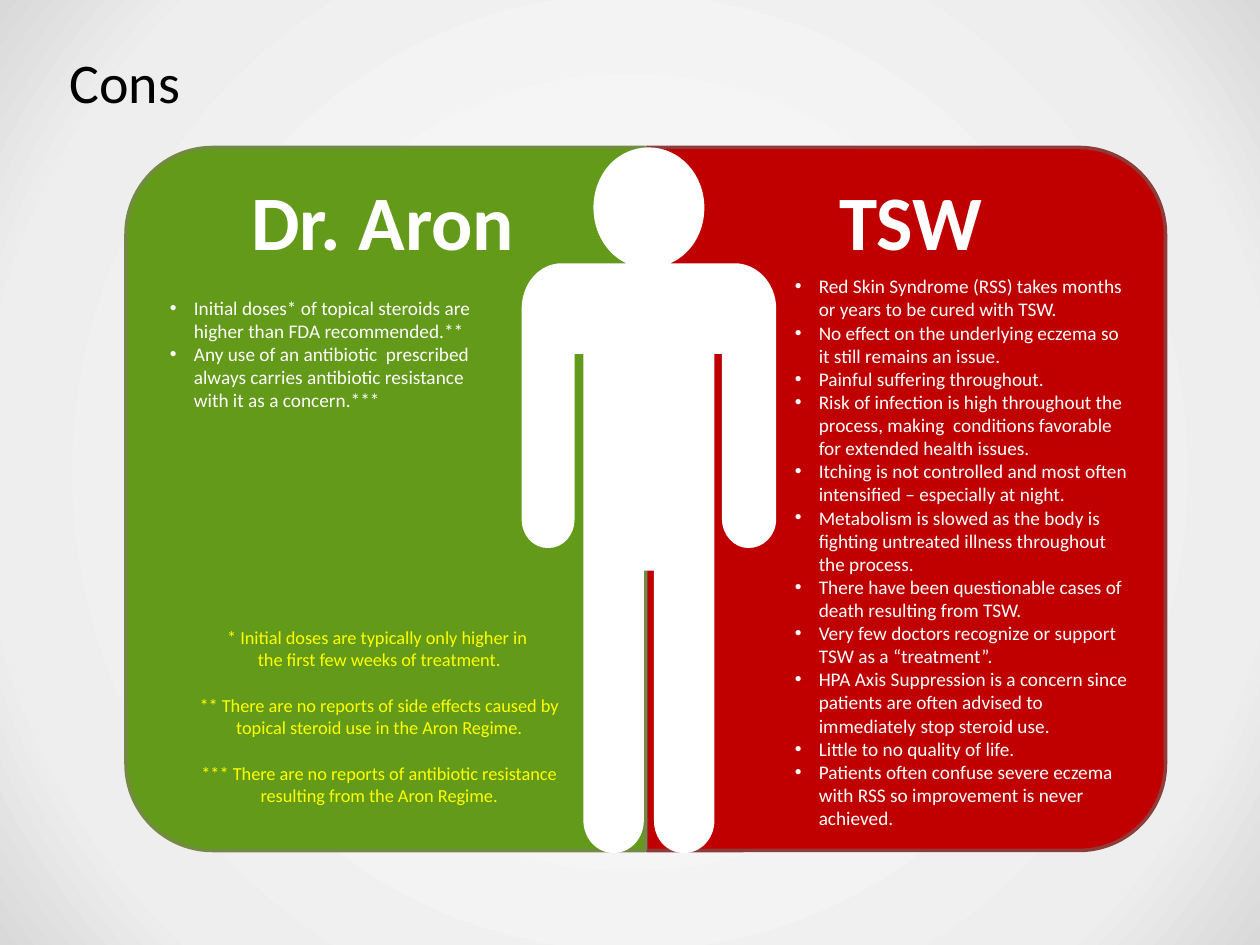
from lxml import etree
from pptx import Presentation
from pptx.dml.color import RGBColor
from pptx.enum import shapes, text
from pptx.oxml import ns, parse_xml
from pptx.util import Inches, Pt

THEME = {
    "font": "Calibri",
    "black": "000000", "white": "FFFFFF", "note": "FFFF00",
    "title_size": 32, "heading_size": 44, "body_size": 11, "note_size": 10.5,
    "background": [(0, "FFFFFF"), (81, "EEEEEE"), (100, "D9D9D9")],
}

TITLE = "Cons"
SIDES = [
    {
        "heading": "Dr. Aron", "heading_box": (1.75, 1.33, 2.58, 0.84),
        "panel_left": 0.27, "rotation": 270, "fill": "639A1A", "line": "738A42",
        "points_box": (1.25, 2.25, 2.81, 4.08),
        "points": [
            "Initial doses* of topical steroids are higher than FDA recommended.**",
            "Any use of an antibiotic  prescribed always carries antibiotic "
            "resistance with it as a concern.***",
        ],
    },
    {
        "heading": "TSW", "heading_box": (6.48, 1.33, 1.5, 0.84),
        "panel_left": 4.4, "rotation": 90, "fill": "C00000", "line": "8E3B39",
        "points_box": (6.21, 2.08, 2.87, 4.83),
        "points": [
            "Red Skin Syndrome (RSS) takes months or years to be cured with TSW.",
            "No effect on the underlying eczema so it still remains an issue.",
            "Painful suffering throughout.",
            "Risk of infection is high throughout the process, making  conditions "
            "favorable for extended health issues.",
            "Itching is not controlled and most often intensified – especially at night.",
            "Metabolism is slowed as the body is fighting untreated illness "
            "throughout the process.",
            "There have been questionable cases of death resulting from TSW.",
            "Very few doctors recognize or support TSW as a “treatment”.",
            "HPA Axis Suppression is a concern since patients are often advised to "
            "immediately stop steroid use.",
            "Little to no quality of life.",
            "Patients often confuse severe eczema with RSS so improvement is never achieved.",
        ],
    },
]
FOOTNOTES = [
    ["* Initial doses are typically only higher in ", "the first few weeks of treatment."],
    ["** There are no reports of side effects caused by topical steroid use in the Aron Regime."],
    ["*** There are no reports of antibiotic resistance resulting from the Aron Regime."],
]
# Outline in inches: a pair is a straight step, six numbers are a cubic curve.
PERSON_START = (5.15, 1.17)
PERSON = [
    (5.39, 1.17, 5.59, 1.38, 5.59, 1.65), (5.59, 1.85, 5.48, 2.02, 5.32, 2.09),
    (5.83, 2.09), (6.01, 2.09, 6.16, 2.25, 6.16, 2.45), (6.16, 2.64),
    (6.16, 3.13, 6.16, 3.63, 6.16, 4.12), (6.16, 4.25, 6.06, 4.35, 5.94, 4.35),
    (5.83, 4.35, 5.73, 4.25, 5.73, 4.12), (5.73, 2.81), (5.67, 2.81),
    (5.67, 4.04, 5.67, 5.28, 5.67, 6.51), (5.67, 6.66, 5.56, 6.77, 5.43, 6.77),
    (5.29, 6.77, 5.19, 6.66, 5.19, 6.51), (5.19, 4.53), (5.11, 4.53),
    (5.11, 5.19, 5.11, 5.85, 5.11, 6.51), (5.11, 6.66, 5, 6.77, 4.87, 6.77),
    (4.74, 6.77, 4.63, 6.66, 4.63, 6.51), (4.63, 2.81), (4.56, 2.81),
    (4.56, 3.25, 4.56, 3.68, 4.56, 4.12), (4.56, 4.25, 4.47, 4.35, 4.35, 4.35),
    (4.23, 4.35, 4.14, 4.25, 4.14, 4.12), (4.14, 2.81), (4.14, 2.45),
    (4.14, 2.25, 4.28, 2.09, 4.46, 2.09), (4.97, 2.09),
    (4.82, 2.02, 4.71, 1.85, 4.71, 1.65), (4.71, 1.38, 4.9, 1.17, 5.15, 1.17),
]


def rgb(name):
    return RGBColor.from_string(THEME.get(name, name))


def inches(box):
    return [Inches(value) for value in box]


def set_background(slide):
    """Fill the background with the theme's circular gradient."""
    stops = "".join(f'<a:gs pos="{pos * 1000}"><a:srgbClr val="{color}"/></a:gs>'
                    for pos, color in THEME["background"])
    background = parse_xml(
        f'<p:bg {ns.nsdecls("p", "a")}><p:bgPr><a:gradFill rotWithShape="1">'
        f'<a:gsLst>{stops}</a:gsLst><a:path path="circle">'
        '<a:fillToRect l="50000" t="50000" r="50000" b="50000"/></a:path>'
        '</a:gradFill><a:effectLst/></p:bgPr></p:bg>')
    slide.element.cSld.insert(0, background)


def write(frame, lines, size, color, align, bold=False):
    frame.word_wrap = True
    frame.text = "\n".join(lines)
    for paragraph in frame.paragraphs:
        paragraph.alignment = align
        font = paragraph.font
        font.name, font.size, font.bold = THEME["font"], Pt(size), bold
        font.color.rgb = rgb(color)


def add_text(slide, box, *style, **options):
    frame = slide.shapes.add_textbox(*inches(box)).text_frame
    write(frame, *style, **options)
    return frame


def add_bullets(frame):
    for paragraph in frame.paragraphs:
        properties = paragraph._p.get_or_add_pPr()
        properties.set("marL", str(Inches(0.19)))
        properties.set("indent", str(-Inches(0.19)))
        bullet_font = etree.Element(ns.qn("a:buFont"), typeface="Arial")
        bullet = etree.Element(ns.qn("a:buChar"), char="•")
        # Bullet elements come before the default run properties.
        properties.insert(0, bullet_font)
        properties.insert(1, bullet)


def add_panel(slide, side):
    panel = slide.shapes.add_shape(shapes.MSO_SHAPE.ROUND_2_SAME_RECTANGLE,
                                   *inches((side["panel_left"], 1.9, 5.58, 4.12)))
    panel.rotation = side["rotation"]
    panel.shadow.inherit = False
    panel.fill.solid()
    panel.fill.fore_color.rgb = rgb(side["fill"])
    panel.line.color.rgb = rgb(side["line"])
    panel.line.width = Pt(2)


def bend(shape, steps):
    """Turn the straight segments of the six-number steps into cubic curves."""
    segments = list(shape.element.iter(ns.qn("a:lnTo")))
    for segment, step in zip(segments, steps):
        if len(step) == 2:
            continue
        curve = etree.Element(ns.qn("a:cubicBezTo"))
        for x, y in zip(step[::2], step[1::2]):
            etree.SubElement(curve, ns.qn("a:pt"), x=str(Inches(x) - shape.left),
                             y=str(Inches(y) - shape.top))
        segment.getparent().replace(segment, curve)


def add_person(slide):
    builder = slide.shapes.build_freeform(*inches(PERSON_START))
    builder.add_line_segments([inches(step[-2:]) for step in PERSON], close=True)
    person = builder.convert_to_shape()
    bend(person, PERSON)
    person.shadow.inherit = False
    person.fill.solid()
    person.fill.fore_color.rgb = rgb("white")
    person.line.fill.background()


def main():
    deck = Presentation()
    deck.slide_width, deck.slide_height = Inches(10), Inches(7.5)
    slide = deck.slides.add_slide(deck.slide_layouts[5])
    set_background(slide)
    left, center = text.PP_ALIGN.LEFT, text.PP_ALIGN.CENTER

    title = slide.shapes.title
    title.left, title.top, title.width, title.height = inches((0.42, 0.25, 9, 0.78))
    frame = title.text_frame
    write(frame, [TITLE], THEME["title_size"], "black", left)
    frame.auto_size = text.MSO_AUTO_SIZE.NONE
    frame.vertical_anchor = text.MSO_ANCHOR.MIDDLE
    frame.margin_left = frame.margin_right = Inches(0.13)
    frame.margin_top = frame.margin_bottom = Inches(0.07)

    for side in reversed(SIDES):
        add_panel(slide, side)
    add_person(slide)

    for side in SIDES:
        heading = add_text(slide, side["heading_box"], [side["heading"]],
                           THEME["heading_size"], "white", center, bold=True)
        heading.auto_size = text.MSO_AUTO_SIZE.SHAPE_TO_FIT_TEXT
        points = add_text(slide, side["points_box"], side["points"],
                          THEME["body_size"], "white", left)
        points.margin_top = points.margin_bottom = Inches(0.1)
        add_bullets(points)

    for row, lines in enumerate(FOOTNOTES):
        note = add_text(slide, (1.42, 4.92 + 0.54 * row, 3.18, 0.45), lines,
                        THEME["note_size"], "note", center)
        note.auto_size = text.MSO_AUTO_SIZE.SHAPE_TO_FIT_TEXT

    deck.save("out.pptx")


if __name__ == "__main__":
    main()
